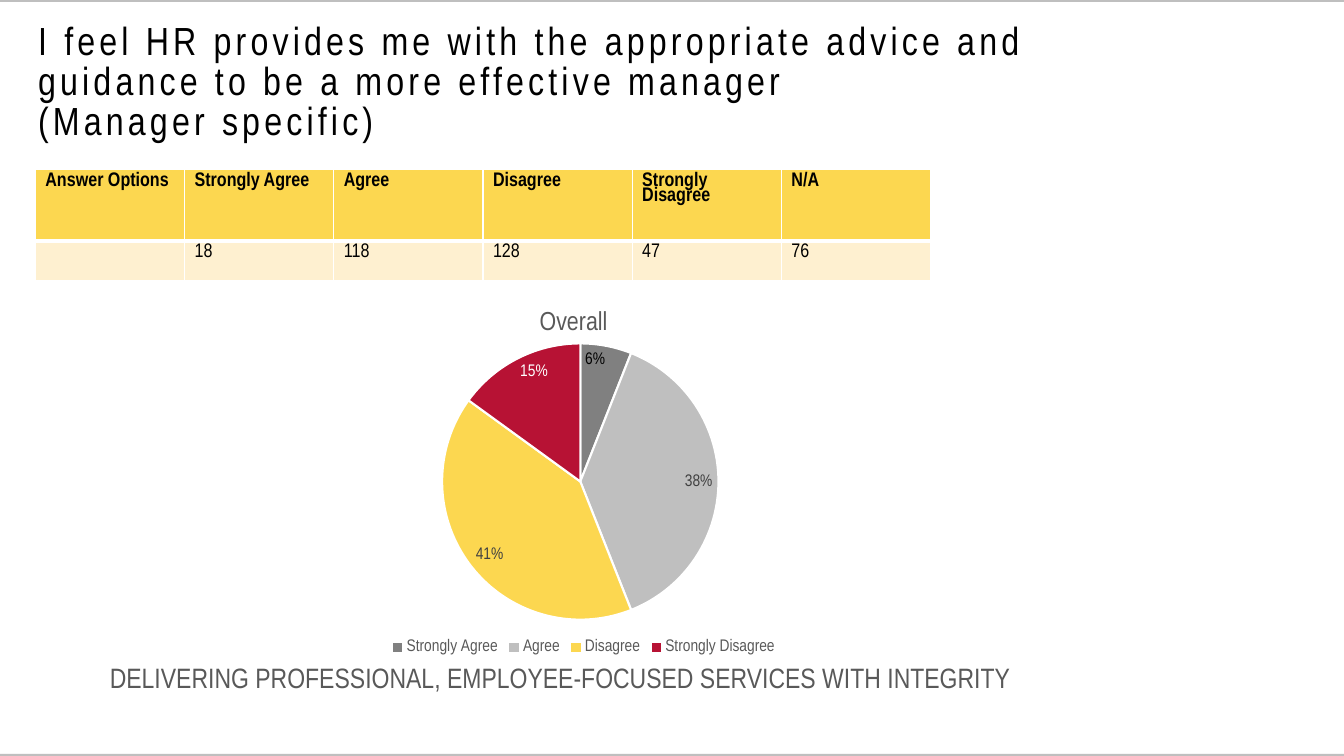
"""Build the manager survey slide with its answer table and pie chart."""
from dataclasses import dataclass
from typing import Any

import lxml.etree
import pptx
import pptx.chart.data
import pptx.dml.color
import pptx.enum.chart
import pptx.enum.shapes
import pptx.enum.text
import pptx.oxml.ns
import pptx.util

EMU_PER_PX = 9144
FONT_NAME = "Arial Narrow"
COLORS = {
    "black": "000000",
    "white": "FFFFFF",
    "text": "595959",
    "label": "404040",
    "dark": "808080",
    "silver": "BFBFBF",
    "yellow": "FCD750",
    "red": "B71234",
    "cream": "FEF0D0",
}


@dataclass(frozen=True)
class Box:
    left: int
    top: int
    width: int
    height: int

    def emu(self) -> list[int]:
        return [px(value) for value in (self.left, self.top, self.width, self.height)]


@dataclass(frozen=True)
class TextBlock:
    box: Box
    text: str
    size: int
    color: str
    line_spacing: float
    anchor: Any
    tracking: int = 0


@dataclass(frozen=True)
class TableRow:
    height: int
    fill: str
    bold: bool
    top_border: int
    bottom_border: int
    texts: tuple[str, ...]


@dataclass(frozen=True)
class Slice:
    name: str
    value: int
    color: str
    label_color: str


BARS = [Box(0, 0, 1333, 2), Box(0, 748, 1333, 2)]
TEXT_BLOCKS = [
    TextBlock(
        Box(28, 30, 1024, 105),
        "I feel HR provides me with the appropriate advice and guidance "
        "to be a more effective manager\v(Manager specific)",
        28, "black", 0.85, pptx.enum.text.MSO_ANCHOR.MIDDLE, 300,
    ),
    TextBlock(
        Box(99, 654, 959, 73),
        "DELIVERING PROFESSIONAL, EMPLOYEE-FOCUSED SERVICES WITH INTEGRITY",
        20, "text", 0.9, pptx.enum.text.MSO_ANCHOR.TOP,
    ),
]
TABLE_BOX = Box(35, 168, 888, 110)
TABLE_ROWS = [
    TableRow(71, "yellow", True, 1, 3, (
        "Answer Options", "Strongly Agree", "Agree", "Disagree", "Strongly Disagree", "N/A")),
    TableRow(39, "cream", False, 3, 1, ("", "18", "118", "128", "47", "76")),
]
CHART_BOX = Box(232, 298, 694, 356)
SLICES = [
    Slice("Strongly Agree", 6, "dark", "black"),
    Slice("Agree", 38, "silver", "label"),
    Slice("Disagree", 41, "yellow", "label"),
    Slice("Strongly Disagree", 15, "red", "white"),
]


def px(value: int) -> int:
    return value * EMU_PER_PX


def rgb(color: str) -> pptx.dml.color.RGBColor:
    return pptx.dml.color.RGBColor.from_string(COLORS[color])


def apply_formats(target: Any, formats: dict[str, Any]) -> None:
    for name, value in formats.items():
        setattr(target, name, value)


def format_font(font: Any, size: float, color: str, bold: bool = False) -> None:
    apply_formats(font, {"name": FONT_NAME, "size": pptx.util.Pt(size), "bold": bold})
    font.color.rgb = rgb(color)


def fill_solid(fill: Any, color: str) -> None:
    fill.solid()
    fill.fore_color.rgb = rgb(color)


def add_bar(slide: Any, box: Box) -> None:
    shape = slide.shapes.add_shape(pptx.enum.shapes.MSO_SHAPE.RECTANGLE, *box.emu())
    shape.shadow.inherit = False
    fill_solid(shape.fill, "silver")
    shape.line.fill.background()


def add_text(slide: Any, block: TextBlock) -> None:
    frame = slide.shapes.add_textbox(*block.box.emu()).text_frame
    apply_formats(frame, {"word_wrap": True, "vertical_anchor": block.anchor})
    paragraph = frame.paragraphs[0]
    apply_formats(paragraph, {"text": block.text, "line_spacing": block.line_spacing})
    for run in paragraph.runs:
        format_font(run.font, block.size, block.color)
        run._r.get_or_add_rPr().set("spc", str(block.tracking))


def add_border(cell: Any, side: str, points: int) -> None:
    properties = cell._tc.get_or_add_tcPr()
    line = lxml.etree.SubElement(
        properties, pptx.oxml.ns.qn(f"a:ln{side}"), w=str(pptx.util.Pt(points)))
    fill = lxml.etree.SubElement(line, pptx.oxml.ns.qn("a:solidFill"))
    lxml.etree.SubElement(fill, pptx.oxml.ns.qn("a:srgbClr"), val=COLORS["white"])


def format_cell(cell: Any, text: str, row: TableRow) -> None:
    borders = {"L": 1, "R": 1, "T": row.top_border, "B": row.bottom_border}
    for side, points in borders.items():
        add_border(cell, side, points)
    fill_solid(cell.fill, row.fill)
    paragraph = cell.text_frame.paragraphs[0]
    paragraph.line_spacing = 0.8
    if text:
        run = paragraph.add_run()
        run.text = text
        format_font(run.font, 14, "black", row.bold)
    else:
        lxml.etree.SubElement(paragraph._p, pptx.oxml.ns.qn("a:endParaRPr"), sz="1400")


def add_answer_table(slide: Any) -> None:
    columns = len(TABLE_ROWS[0].texts)
    table = slide.shapes.add_table(len(TABLE_ROWS), columns, *TABLE_BOX.emu()).table
    apply_formats(table, {"first_row": False, "horz_banding": False})
    for index, row in enumerate(TABLE_ROWS):
        table.rows[index].height = px(row.height)
        for column, text in enumerate(row.texts):
            format_cell(table.cell(index, column), text, row)


def set_layout(parent: Any, index: int, values: dict[str, Any]) -> None:
    for existing in parent.findall(pptx.oxml.ns.qn("c:layout")):
        parent.remove(existing)
    layout = lxml.etree.Element(pptx.oxml.ns.qn("c:layout"))
    manual = lxml.etree.SubElement(layout, pptx.oxml.ns.qn("c:manualLayout"))
    for name, value in values.items():
        lxml.etree.SubElement(manual, pptx.oxml.ns.qn(f"c:{name}"), val=str(value))
    parent.insert(index, layout)


def format_slice(point: Any, part: Slice) -> None:
    fill_solid(point.format.fill, part.color)
    fill_solid(point.format.line.fill, "white")
    point.format.line.width = pptx.util.Pt(1.5)
    label = point.data_label
    format_font(label.font, 12, part.label_color)
    label.position = pptx.enum.chart.XL_LABEL_POSITION.INSIDE_END


def add_pie(slide: Any) -> None:
    data = pptx.chart.data.CategoryChartData()
    data.categories = [part.name for part in SLICES]
    data.add_series("Series 1", [part.value for part in SLICES])
    chart = slide.shapes.add_chart(
        pptx.enum.chart.XL_CHART_TYPE.PIE, *CHART_BOX.emu(), data).chart
    format_font(chart.font, 10, "black")
    apply_formats(chart, {"has_title": True, "has_legend": True})
    run = chart.chart_title.text_frame.paragraphs[0].add_run()
    run.text = "Overall"
    format_font(run.font, 18.6, "text")
    apply_formats(chart.legend, {
        "position": pptx.enum.chart.XL_LEGEND_POSITION.BOTTOM, "include_in_layout": False})
    format_font(chart.legend.font, 12, "text")
    plot = chart.plots[0]
    apply_formats(plot, {"vary_by_categories": True, "has_data_labels": True})
    apply_formats(plot.data_labels, {
        "show_percentage": True, "show_value": False, "number_format": "0%",
        "number_format_is_linked": False,
        "position": pptx.enum.chart.XL_LABEL_POSITION.INSIDE_END})
    format_font(plot.data_labels.font, 12, "label")
    for index, part in enumerate(SLICES):
        format_slice(plot.series[0].points[index], part)
    for label in chart._chartSpace.xpath(".//c:dLbl | .//c:ser/c:dLbls"):
        for name, value in {"showVal": "0", "showPercent": "1"}.items():
            label.find(pptx.oxml.ns.qn(f"c:{name}")).set("val", value)
    set_layout(chart.chart_title._element, 1, {
        "xMode": "edge", "yMode": "edge", "x": 0.43, "y": 0.01})
    set_layout(chart._chartSpace.xpath("c:chart/c:plotArea")[0], 0, {
        "layoutTarget": "inner", "xMode": "edge", "yMode": "edge",
        "x": 0.13, "y": 0.12, "w": 0.73, "h": 0.77})


def main() -> None:
    presentation = pptx.Presentation()
    apply_formats(presentation, {"slide_width": px(1333), "slide_height": px(750)})
    slide = presentation.slides.add_slide(presentation.slide_layouts[6])
    for box in BARS:
        add_bar(slide, box)
    add_pie(slide)
    add_answer_table(slide)
    for block in TEXT_BLOCKS:
        add_text(slide, block)
    presentation.save("out.pptx")


if __name__ == "__main__":
    main()
